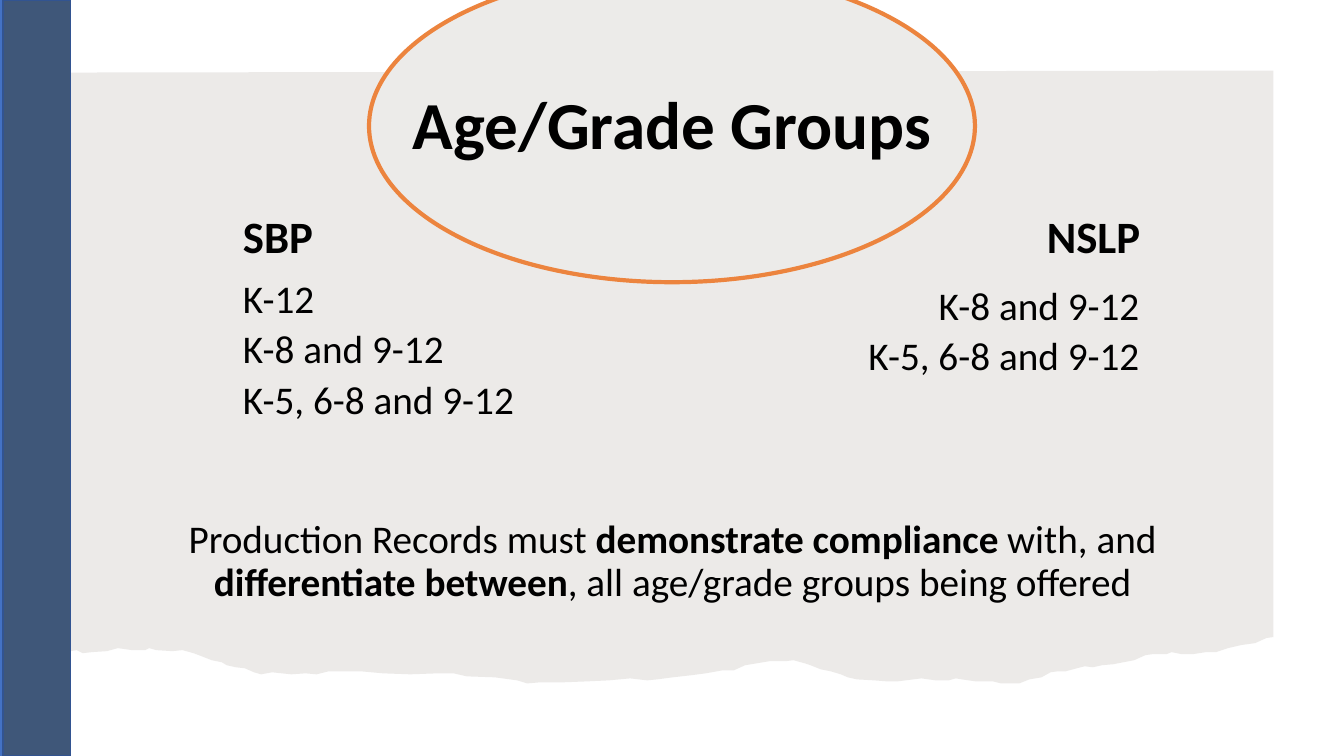
from dataclasses import dataclass

from lxml import etree
from pptx import Presentation
from pptx import util as u
from pptx.dml.color import RGBColor
from pptx.enum import shapes, text
from pptx.oxml import ns


@dataclass(frozen=True)
class Theme:
    font: str = "Calibri"
    ink: str = "000000"
    paper: str = "82766A"
    paper_alpha: int = 15
    strip: str = "4472C4"
    bar: str = "3F5779"
    bar_line: str = "325491"
    oval: str = "ECEBE9"
    oval_line: str = "EC843E"
    title: int = 48
    heading: int = 32
    body: int = 28


THEME = Theme()
LEFT, CENTER, RIGHT = text.PP_ALIGN.LEFT, text.PP_ALIGN.CENTER, text.PP_ALIGN.RIGHT
TOP, MIDDLE = text.MSO_ANCHOR.TOP, text.MSO_ANCHOR.MIDDLE

PAPER_EDGE = [
    (12.63, 0.7), (12.63, 6.32), (12.56, 6.33), (12.45, 6.38), (12.31, 6.4),
    (12.18, 6.43), (12.06, 6.47), (11.96, 6.47), (11.83, 6.49), (11.72, 6.49),
    (11.62, 6.47), (11.57, 6.49), (11.43, 6.49), (11.36, 6.5), (11.25, 6.55),
    (11.04, 6.59), (10.93, 6.6), (10.84, 6.62), (10.76, 6.61), (10.68, 6.63),
    (10.57, 6.66), (10.49, 6.66), (10.42, 6.67), (10.33, 6.72), (10.21, 6.74),
    (10.11, 6.78), (9.93, 6.78), (9.85, 6.76), (9.68, 6.76), (9.54, 6.74),
    (9.48, 6.73), (9.41, 6.75), (9.28, 6.75), (9.14, 6.73), (8.9, 6.76),
    (8.8, 6.76), (8.67, 6.75), (8.5, 6.74), (8.41, 6.72), (8.34, 6.69),
    (8.24, 6.66), (8.14, 6.64), (8.04, 6.6), (7.98, 6.58), (7.87, 6.55),
    (7.79, 6.56), (7.63, 6.56), (7.39, 6.6), (7.28, 6.65), (7.17, 6.65),
    (7.0, 6.68), (6.85, 6.7), (6.67, 6.72), (6.52, 6.74), (6.42, 6.75),
    (6.25, 6.73), (6.04, 6.75), (5.82, 6.76), (5.57, 6.77), (5.35, 6.77),
    (5.23, 6.78), (5.13, 6.75), (4.91, 6.72), (4.63, 6.71), (4.5, 6.68),
    (4.34, 6.68), (4.07, 6.69), (3.8, 6.68), (3.58, 6.66), (3.41, 6.66),
    (3.26, 6.66), (3.14, 6.69), (3.03, 6.68), (2.89, 6.69), (2.7, 6.67),
    (2.59, 6.69), (2.52, 6.67), (2.43, 6.63), (2.34, 6.62), (2.25, 6.6),
    (2.2, 6.57), (2.1, 6.55), (2.0, 6.51), (1.92, 6.48), (1.81, 6.45),
    (1.71, 6.46), (1.55, 6.45), (1.48, 6.43), (1.44, 6.45), (1.31, 6.45),
    (1.17, 6.43), (1.06, 6.46), (0.91, 6.47), (0.82, 6.48), (0.76, 6.45),
    (0.7, 6.46), (0.7, 0.72),
]


def paint(sp, fill, line=None, width=0):
    sp.shadow.inherit = False
    sp.fill.solid()
    sp.fill.fore_color.rgb = RGBColor.from_string(fill)
    if line:
        sp.line.color.rgb = RGBColor.from_string(line)
        sp.line.width = u.Pt(width)
    else:
        sp.line.fill.background()


def add_block(s, kind, box, fill, line=None, width=0):
    sp = s.shapes.add_shape(kind, *map(u.Inches, box))
    paint(sp, fill, line, width)


def add_paper(s):
    points = [(u.Inches(x), u.Inches(y)) for x, y in PAPER_EDGE]
    builder = s.shapes.build_freeform(*points[0])
    builder.add_line_segments(points[1:], close=True)
    sp = builder.convert_to_shape()
    paint(sp, THEME.paper)
    color = sp.fill._xPr.find(".//" + ns.qn("a:srgbClr"))
    etree.SubElement(color, ns.qn("a:alpha"), val=str(THEME.paper_alpha * 1000))


def fill_text(sp, box, paragraphs, size, align=LEFT, anchor=TOP, spacing=1.0, after=0):
    sp.left, sp.top, sp.width, sp.height = map(u.Inches, box)
    tf = sp.text_frame
    tf.word_wrap = True
    tf.auto_size = text.MSO_AUTO_SIZE.NONE
    tf.vertical_anchor = anchor
    for i, runs in enumerate(paragraphs):
        p = tf.add_paragraph() if i else tf.paragraphs[0]
        p.alignment = align
        p.line_spacing = spacing
        p.space_before = u.Pt(0)
        p.space_after = u.Pt(after)
        pPr = p._p.get_or_add_pPr()
        pPr.set("marL", "0")
        pPr.set("indent", "0")
        etree.SubElement(pPr, ns.qn("a:buNone"))
        for words, bold in runs:
            r = p.add_run()
            r.text = words
            r.font.name = THEME.font
            r.font.size = u.Pt(size)
            r.font.bold = bold
            r.font.color.rgb = RGBColor.from_string(THEME.ink)


def add_program(heading, body, name, groups, heading_box, body_box, align):
    fill_text(heading, heading_box, [[(name, True)]], THEME.heading, align)
    fill_text(body, body_box, [[(group, False)] for group in groups],
              THEME.body, align, spacing=0.9, after=6)


def main():
    prs = Presentation()
    prs.slide_width, prs.slide_height = u.Inches(13.33), u.Inches(7.5)
    s = prs.slides.add_slide(prs.slide_layouts[4])
    title, left_head, left_body, right_head, right_body = list(s.placeholders)

    add_paper(s)
    rect, oval = shapes.MSO_SHAPE.RECTANGLE, shapes.MSO_SHAPE.OVAL
    add_block(s, rect, (0, 0, 0.7, 7.5), THEME.strip)
    add_block(s, oval, (3.66, -0.3, 6.01, 3.1), THEME.oval, THEME.oval_line, 3)
    add_block(s, rect, (0.03, 0, 0.67, 7.5), THEME.bar, THEME.bar_line, 1)
    for sp in (left_head, left_body, right_head, right_body, title):
        s.shapes._spTree.append(sp._element)

    fill_text(title, (3.14, 0.55, 7.05, 1.44), [[("Age/Grade Groups", True)]],
              THEME.title, CENTER, MIDDLE, 0.9)
    add_program(left_head, left_body, "SBP",
                ["K-12", "K-8 and 9-12", "K-5, 6-8 and 9-12"],
                (2.31, 2.02, 6.01, 0.64), (2.31, 2.72, 3.61, 3.12), LEFT)
    add_program(right_head, right_body, "NSLP",
                ["K-8 and 9-12", "K-5, 6-8 and 9-12"],
                (5.92, 2.02, 5.49, 0.64), (7.92, 2.79, 3.48, 2.51), RIGHT)

    box = tuple(map(u.Inches, (1.48, 4.38, 10.38, 2.4)))
    fill_text(s.shapes.add_textbox(*box), (1.48, 4.38, 10.38, 2.4), [[
        ("Production Records must ", False),
        ("demonstrate compliance ", True),
        ("with, and ", False),
        ("differentiate between", True),
        (", all age/grade groups being offered", False),
    ]], THEME.body, CENTER, MIDDLE, 0.9)

    prs.save("out.pptx")


if __name__ == "__main__":
    main()
